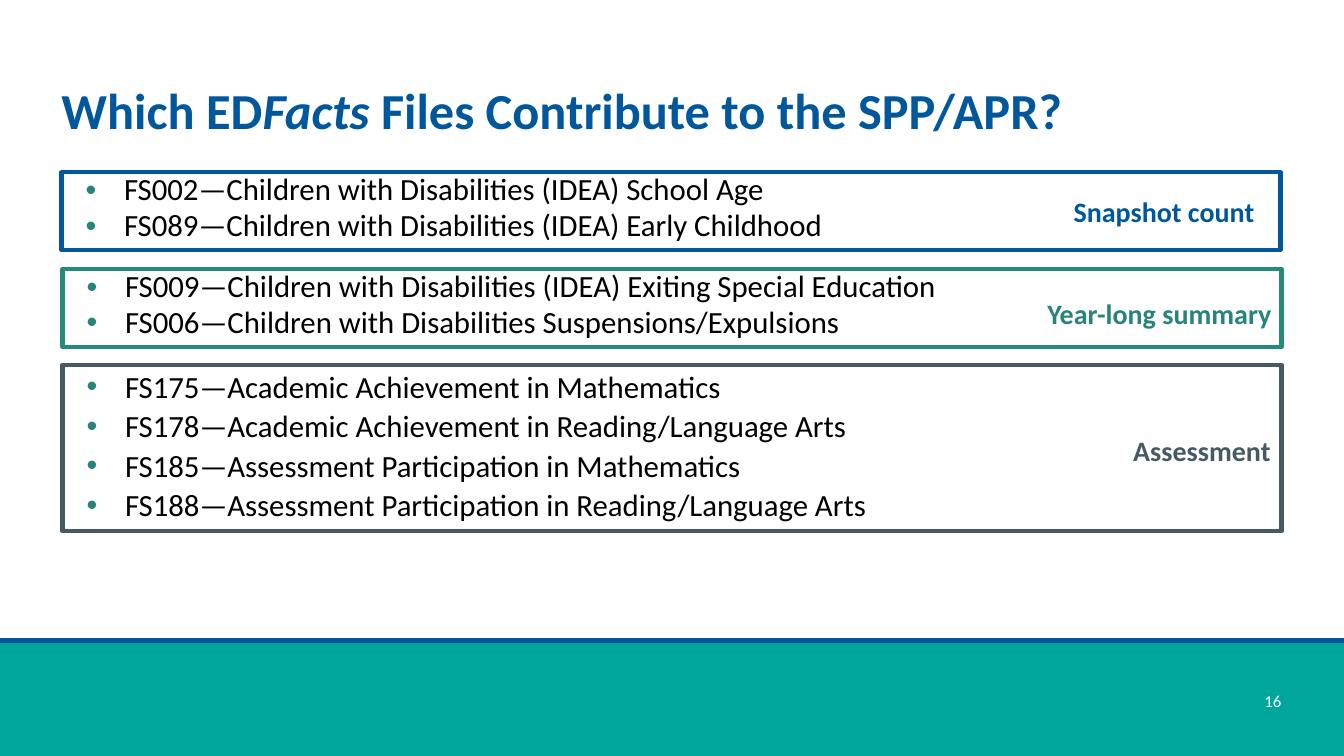
"""Build the slide on files that feed the SPP/APR."""
import pptx
import pptx.util
import pptx.dml.color
import pptx.enum.shapes
import pptx.enum.text
import pptx.oxml
import pptx.oxml.ns
from pptx.util import Inches

COLORS = {
    "blue": "01579B",
    "teal": "00A59B",
    "green": "268A7A",
    "dot": "26847A",
    "slate": "455A64",
    "black": "000000",
    "white": "FFFFFF",
}

GROUPS = [
    ((0.62, 3.62, 1.65), "slate", 1.07,
     ["FS175—Academic Achievement in Mathematics",
      "FS178—Academic Achievement in Reading/Language Arts",
      "FS185—Assessment Participation in Mathematics",
      "FS188—Assessment Participation in Reading/Language Arts"],
     ("Assessment", 9.73, 4.25, "slate")),
    ((0.62, 2.67, 0.77), "green", 0.97,
     ["FS009—Children with Disabilities (IDEA) Exiting Special Education",
      "FS006—Children with Disabilities Suspensions/Expulsions"],
     ("Year-long summary", 9.74, 2.89, "dot")),
    ((0.61, 1.71, 0.77), "blue", 0.97,
     ["FS002—Children with Disabilities (IDEA) School Age",
      "FS089—Children with Disabilities (IDEA) Early Childhood"],
     ("Snapshot count", 9.57, 1.88, "blue")),
]


def rgb(name):
    """Return the named colour."""
    return pptx.dml.color.RGBColor.from_string(COLORS[name])


def bullet(para):
    """Give a paragraph a hanging coloured bullet."""
    props = para._p.get_or_add_pPr()
    props.set("marL", str(Inches(0.62)))
    props.set("indent", str(Inches(-0.38)))
    space = pptx.oxml.ns.nsdecls("a")
    for xml in (
        f'<a:buClr {space}><a:srgbClr val="{COLORS["dot"]}"/></a:buClr>',
        f'<a:buFont {space} typeface="Arial"/>',
        f'<a:buChar {space} char="•"/>',
    ):
        props.append(pptx.oxml.parse_xml(xml))


def write(shape, lines, size, color, bold=False, align="LEFT", anchor="TOP",
          inset=0, space=None, dots=False):
    """Fill a shape with lines, each a string or a list of (text, italic) runs."""
    frame = shape.text_frame
    frame.word_wrap = True
    frame.vertical_anchor = getattr(pptx.enum.text.MSO_ANCHOR, anchor)
    frame.margin_left = frame.margin_right = Inches(inset)
    frame.margin_top = frame.margin_bottom = Inches(inset / 2)
    for index, line in enumerate(lines):
        para = frame.add_paragraph() if index else frame.paragraphs[0]
        para.alignment = getattr(pptx.enum.text.PP_ALIGN, align)
        if space:
            para.line_spacing = space
        if dots:
            bullet(para)
        for text, slant in [(line, False)] if isinstance(line, str) else line:
            run = para.add_run()
            run.text = text
            run.font.name = "Calibri"
            run.font.size = pptx.util.Pt(size)
            run.font.bold = bold
            run.font.italic = slant
            run.font.color.rgb = rgb(color)


def label(slide, box, lines, **style):
    """Add a text box."""
    shape = slide.shapes.add_textbox(*map(Inches, box))
    write(shape, lines, **style)


def block(slide, box, fill=None, line=None):
    """Add a rectangle with a fill or an outline."""
    shape = slide.shapes.add_shape(
        pptx.enum.shapes.MSO_SHAPE.RECTANGLE, *map(Inches, box))
    shape.shadow.inherit = False
    if fill:
        shape.fill.solid()
        shape.fill.fore_color.rgb = rgb(fill)
    else:
        shape.fill.background()
    if line:
        shape.line.color.rgb = rgb(line)
        shape.line.width = pptx.util.Pt(3)
    else:
        shape.line.fill.background()
    return shape


def main():
    """Build and save the slide."""
    deck = pptx.Presentation()
    deck.slide_width, deck.slide_height = Inches(13.33), Inches(7.5)
    slide = deck.slides.add_slide(deck.slide_layouts[6])
    block(slide, (0, 6.38, 13.33, 1.12), fill="teal")
    block(slide, (0, 6.33, 13.33, 0.05), fill="blue")
    title = [("Which ED", False), ("Facts", True),
             (" Files Contribute to the SPP/APR?", False)]
    label(slide, (0.61, 0.4, 12.09, 1.45), [title], size=36, color="blue",
          bold=True, anchor="MIDDLE", space=0.9)
    label(slide, (12.24, 6.67, 0.47, 0.56), ["16"], size=12, color="white",
          align="RIGHT", anchor="MIDDLE")
    for (left, top, high), edge, space, files, (name, x, y, ink) in GROUPS:
        frame = block(slide, (left, top, 12.09, high), line=edge)
        write(frame, files, size=22, color="black", space=space, dots=True)
        label(slide, (x, y, 2.97, 0.44), [name], size=20, color=ink,
              bold=True, align="RIGHT", inset=0.1)
    deck.save("out.pptx")


if __name__ == "__main__":
    main()
